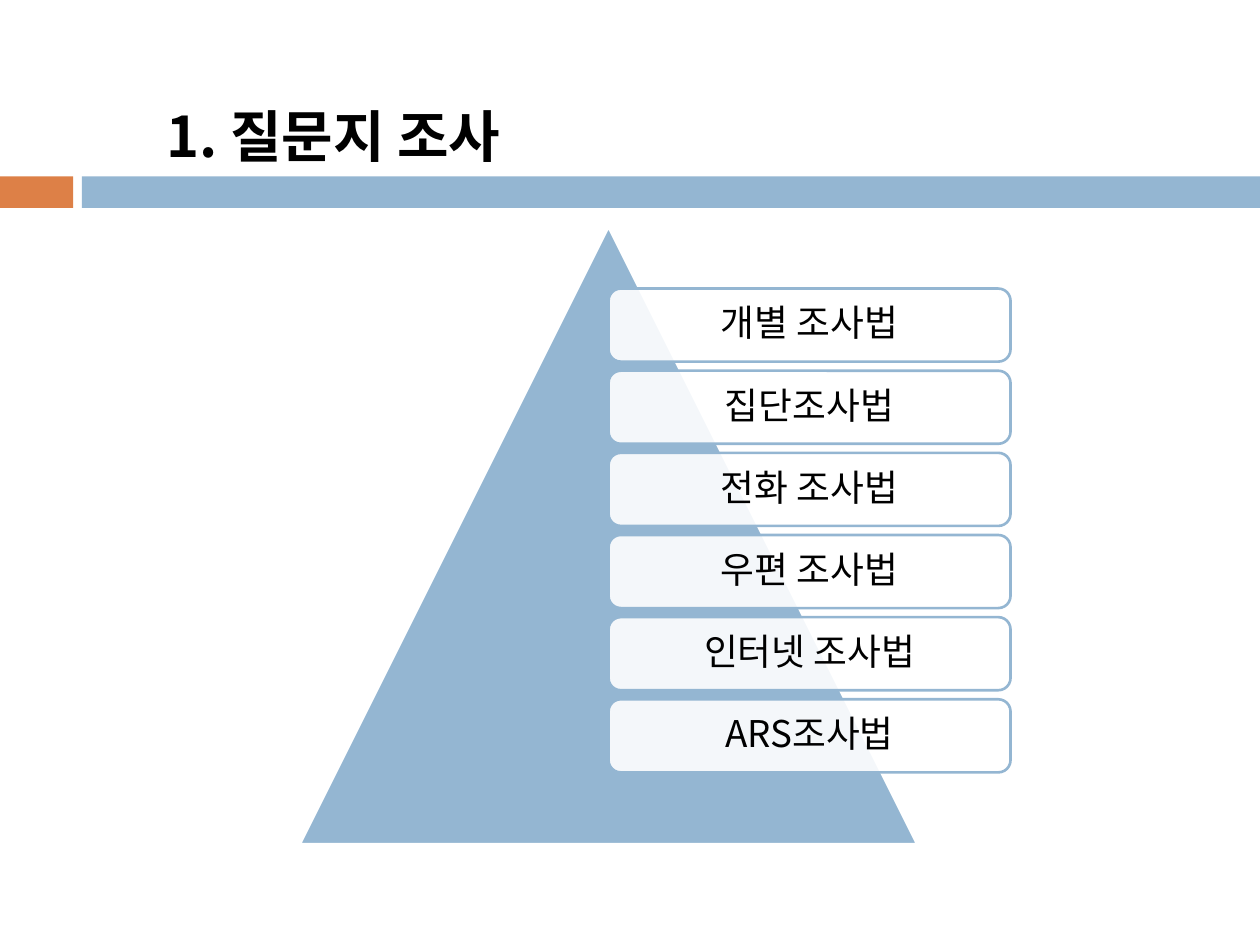
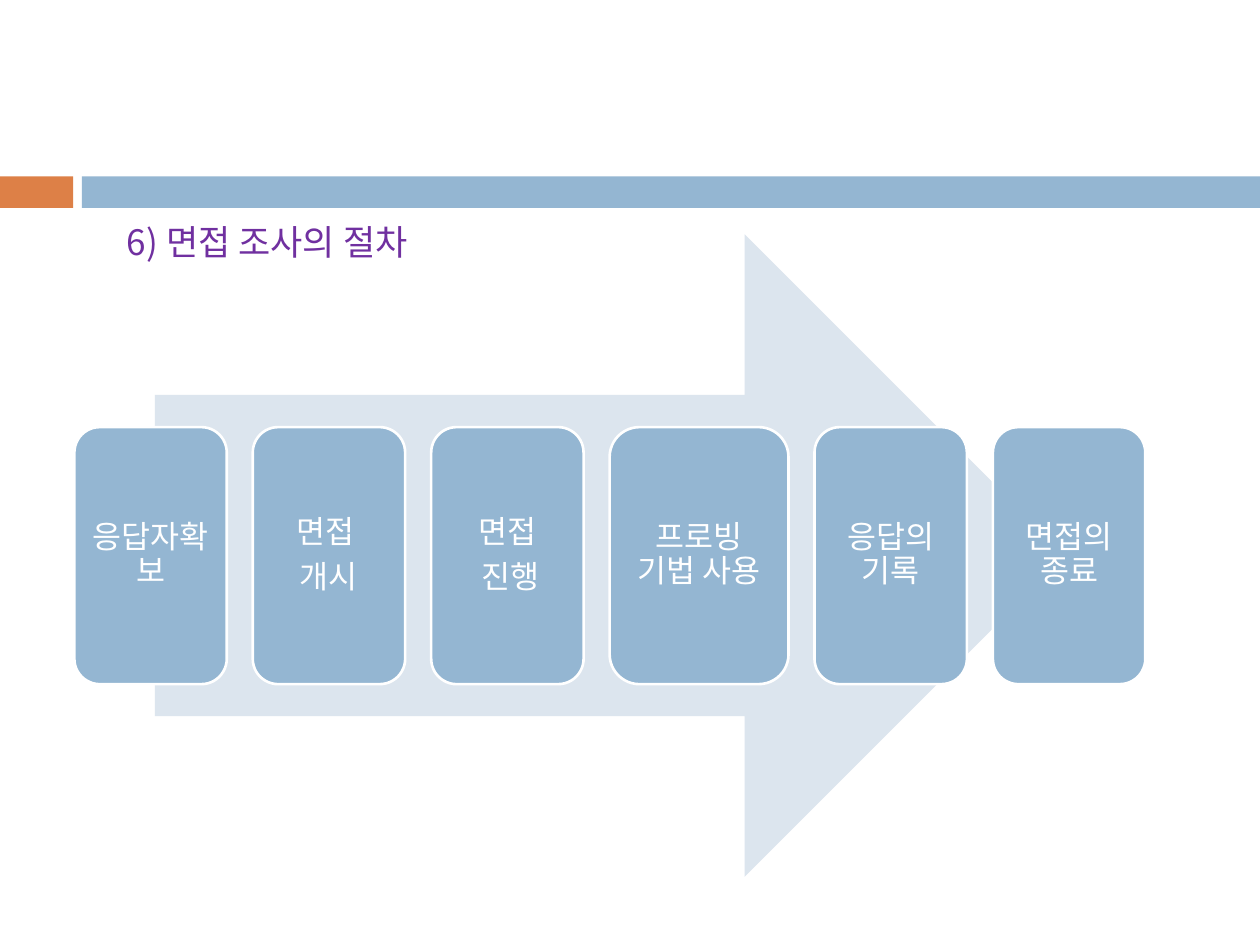
from lxml import etree
from pptx import Presentation
from pptx.dml.color import RGBColor
from pptx.enum import shapes, text
from pptx.oxml import ns
from pptx.util import Inches, Pt

FONT = "Noto Sans CJK KR"
BLUE = RGBColor(0x94, 0xB6, 0xD2)
PALE = RGBColor(0xDC, 0xE5, 0xEE)
ORANGE = RGBColor(0xDD, 0x80, 0x47)
PURPLE = RGBColor(0x70, 0x30, 0xA0)
WHITE = RGBColor(0xFF, 0xFF, 0xFF)
BLACK = RGBColor(0, 0, 0)
SHAPE = shapes.MSO_SHAPE


def write(tf, content, size, color, bold=False, centered=False):
    for i, line in enumerate(content.split("\n")):
        p = tf.paragraphs[0] if i == 0 else tf.add_paragraph()
        if centered:
            p.alignment = text.PP_ALIGN.CENTER
            p.line_spacing = 0.9
            after = etree.SubElement(p._p.get_or_add_pPr(), ns.qn("a:spcAft"))
            etree.SubElement(after, ns.qn("a:spcPct"), val="35000")
        r = p.add_run()
        r.text = line
        r.font.name, r.font.size, r.font.bold = FONT, Pt(size), bold
        r.font.color.rgb = color
        etree.SubElement(r._r.get_or_add_rPr(), ns.qn("a:ea"), typeface=FONT)


class Deck:
    """Hold the shared style and draw elements on the current slide."""

    def __init__(self):
        self.prs = Presentation()
        self.prs.slide_width, self.prs.slide_height = Inches(10), Inches(7.5)

    def new_slide(self):
        self.s = self.prs.slides.add_slide(self.prs.slide_layouts[6])
        self.shape(SHAPE.RECTANGLE, 0, 1.4, 0.58, 0.25, ORANGE)
        self.shape(SHAPE.RECTANGLE, 0.65, 1.4, 9.35, 0.25, BLUE)

    def shape(self, kind, x, y, w, h, fill, line=None, opacity=None):
        sp = self.s.shapes.add_shape(kind, Inches(x), Inches(y), Inches(w), Inches(h))
        sp.shadow.inherit = False
        sp.fill.solid()
        sp.fill.fore_color.rgb = fill
        if opacity is not None:
            clr = sp._element.spPr.find(ns.qn("a:solidFill"))[0]
            etree.SubElement(clr, ns.qn("a:alpha"), val=str(opacity * 1000))
        if line is None:
            sp.line.fill.background()
        else:
            sp.line.color.rgb = line
            sp.line.width = Pt(1.5)
        return sp

    def card(self, x, y, w, h, content, size, color, inset, fill, line, opacity=None):
        sp = self.shape(SHAPE.ROUNDED_RECTANGLE, x, y, w, h, fill, line, opacity)
        tf = sp.text_frame
        tf.word_wrap = True
        tf.vertical_anchor = text.MSO_ANCHOR.MIDDLE
        tf.margin_left = tf.margin_right = Inches(inset)
        tf.margin_top = tf.margin_bottom = Inches(inset)
        write(tf, content, size, color, centered=True)

    def label(self, x, y, w, h, content, size, color, bold=False):
        sp = self.s.shapes.add_textbox(Inches(x), Inches(y), Inches(w), Inches(h))
        tf = sp.text_frame
        tf.word_wrap = True
        tf.auto_size = text.MSO_AUTO_SIZE.SHAPE_TO_FIT_TEXT
        write(tf, content, size, color, bold=bold)


def survey_methods(deck):
    deck.new_slide()
    deck.shape(SHAPE.ISOSCELES_TRIANGLE, 2.38, 1.8, 4.9, 4.9, BLUE, WHITE)
    methods = ["개별 조사법", "집단조사법", "전화 조사법",
               "우편 조사법", "인터넷 조사법", "ARS조사법"]
    top, bottom, h = 2.29, 6.13, 0.58
    pitch = (bottom - top - h) / (len(methods) - 1)
    for i, method in enumerate(methods):
        deck.card(4.83, top + i * pitch, 3.19, h, method, 21, BLACK, 0.09,
                  WHITE, BLUE, opacity=90)
    deck.label(1.22, 0.76, 3.39, 0.64, "1. 질문지 조사", 32, BLACK, bold=True)


def interview_steps(deck):
    deck.new_slide()
    deck.shape(SHAPE.RIGHT_ARROW, 1.23, 1.86, 7.23, 5.1, PALE)
    steps = [("응답자확보", 1.21), ("면접 \n개시", 1.21), ("면접\n 진행", 1.21),
             ("프로빙 기법 사용", 1.42), ("응답의 기록", 1.21), ("면접의 종료", 1.21)]
    left, right = 0.59, 9.09
    gap = (right - left - sum(w for _, w in steps)) / (len(steps) - 1)
    x = left
    for step, w in steps:
        deck.card(x, 3.39, w, 2.04, step, 18, WHITE, 0.07, BLUE, WHITE)
        x += w + gap
    deck.label(0.91, 1.7, 4.17, 0.44, "6) 면접 조사의 절차", 20, PURPLE)


def main():
    deck = Deck()
    survey_methods(deck)
    interview_steps(deck)
    deck.prs.save("out.pptx")


if __name__ == "__main__":
    main()
